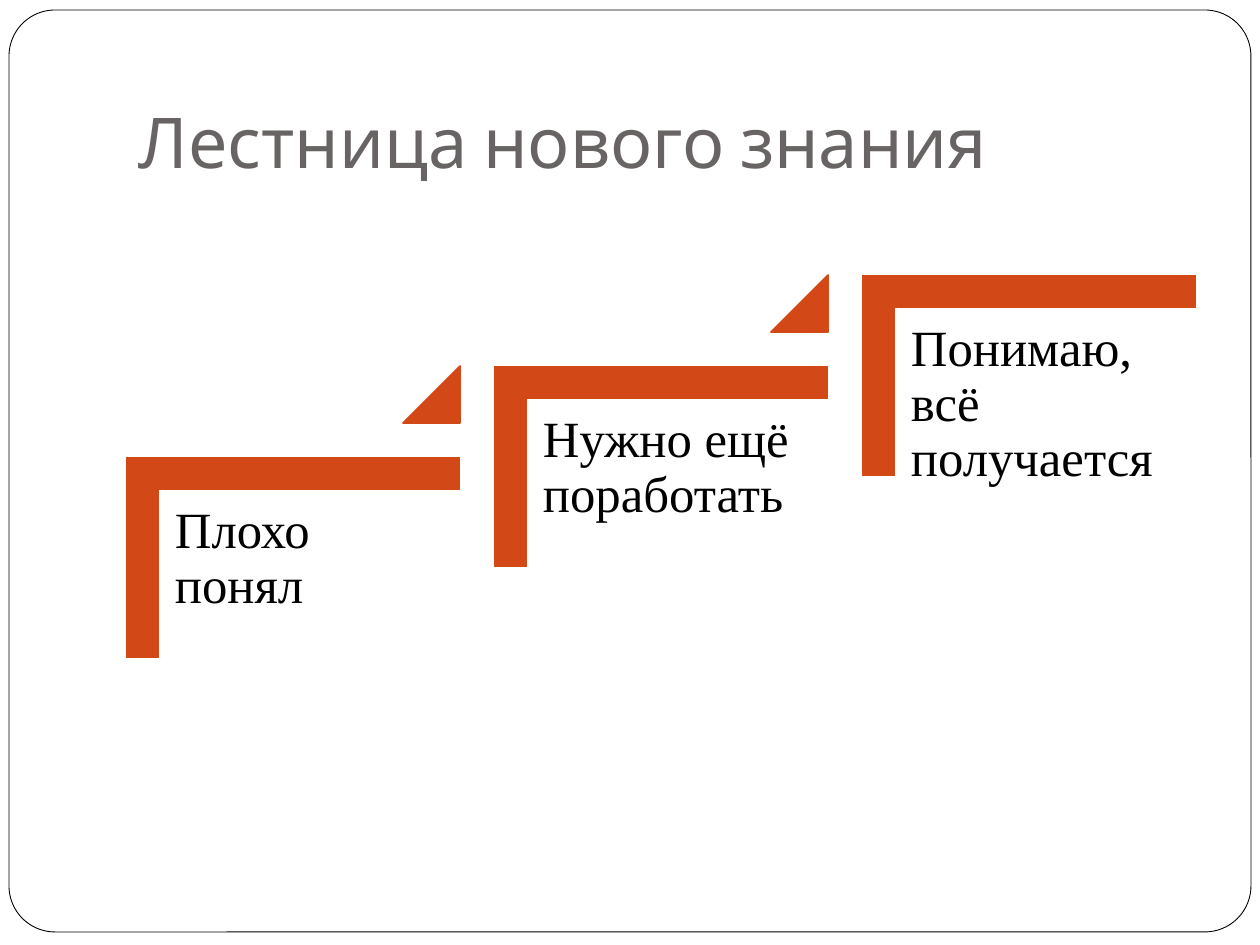
import pptx
import pptx.dml.color
import pptx.enum.shapes
import pptx.enum.text
import pptx.util

SCALE = 914400 / 126
SHAPES = pptx.enum.shapes.MSO_SHAPE
ANCHORS = pptx.enum.text.MSO_ANCHOR
ORANGE = "D34817"
STEPS = ["Плохо понял", "Нужно ещё поработать", "Понимаю, всё получается"]
STEP_RIGHT = 368
STEP_UP = 91


def px(length):
    return pptx.util.Emu(round(length * SCALE))


def set_color(color_format, value):
    color_format.rgb = pptx.dml.color.RGBColor.from_string(value)


def add_shape(slide, kind, box, fill, line, width, adjustments=(), rotation=0):
    shape = slide.shapes.add_shape(kind, *map(px, box))
    shape.shadow.inherit = False
    shape.rotation = rotation
    for index, value in enumerate(adjustments):
        shape.adjustments[index] = value
    shape.fill.solid()
    set_color(shape.fill.fore_color, fill)
    set_color(shape.line.color, line)
    shape.line.width = pptx.util.Pt(width)
    return shape


def write_text(shape, text, *, font, size, color, insets, anchor=ANCHORS.TOP,
               line_spacing=1.0, space_after=0):
    frame = shape.text_frame
    frame.word_wrap = True
    frame.auto_size = pptx.enum.text.MSO_AUTO_SIZE.NONE
    frame.vertical_anchor = anchor
    (frame.margin_left, frame.margin_top,
     frame.margin_right, frame.margin_bottom) = map(px, insets)
    paragraph = frame.paragraphs[0]
    paragraph.alignment = pptx.enum.text.PP_ALIGN.LEFT
    paragraph.line_spacing = line_spacing
    paragraph.space_before = pptx.util.Pt(0)
    paragraph.space_after = pptx.util.Pt(space_after)
    run = paragraph.add_run()
    run.text = text
    run.font.name = font
    run.font.size = pptx.util.Pt(size)
    set_color(run.font.color, color)


def add_frame(slide):
    frame = add_shape(slide, SHAPES.ROUNDED_RECTANGLE, (9, 10, 1242, 922),
                      "FFFFFF", "000000", 0.5, [0.05])
    slide.shapes.element.insert(2, frame.element)


def add_title(slide, text):
    title = slide.shapes.title
    title.left, title.top, title.width, title.height = map(px, (126, 38, 1071, 158))
    write_text(title, text, font="Cabin", size=40, color="696464",
               insets=(13, 6, 13, 13), anchor=ANCHORS.BOTTOM)


def add_step(slide, index, text):
    right, up = index * STEP_RIGHT, index * STEP_UP
    add_shape(slide, SHAPES.CORNER, (193 + right, 391 - up, 200, 333),
              ORANGE, ORANGE, 1, [0.16, 0.16], 90)
    label = slide.shapes.add_textbox(
        *map(px, (160 + right, 490 - up, 301, 263)))
    write_text(label, text, font="Times New Roman", size=29, color="000000",
               insets=(15, 15, 15, 15), line_spacing=0.9, space_after=10)
    if index < len(STEPS) - 1:
        add_shape(slide, SHAPES.ISOSCELES_TRIANGLE,
                  (403 + right, 366 - up, 57, 57), ORANGE, ORANGE, 1, [1])


def main():
    presentation = pptx.Presentation()
    presentation.slide_width = px(1260)
    presentation.slide_height = px(945)
    slide = presentation.slides.add_slide(presentation.slide_layouts[5])
    add_frame(slide)
    add_title(slide, "Лестница нового знания")
    for index, text in enumerate(STEPS):
        add_step(slide, index, text)
    presentation.save("out.pptx")


if __name__ == "__main__":
    main()
